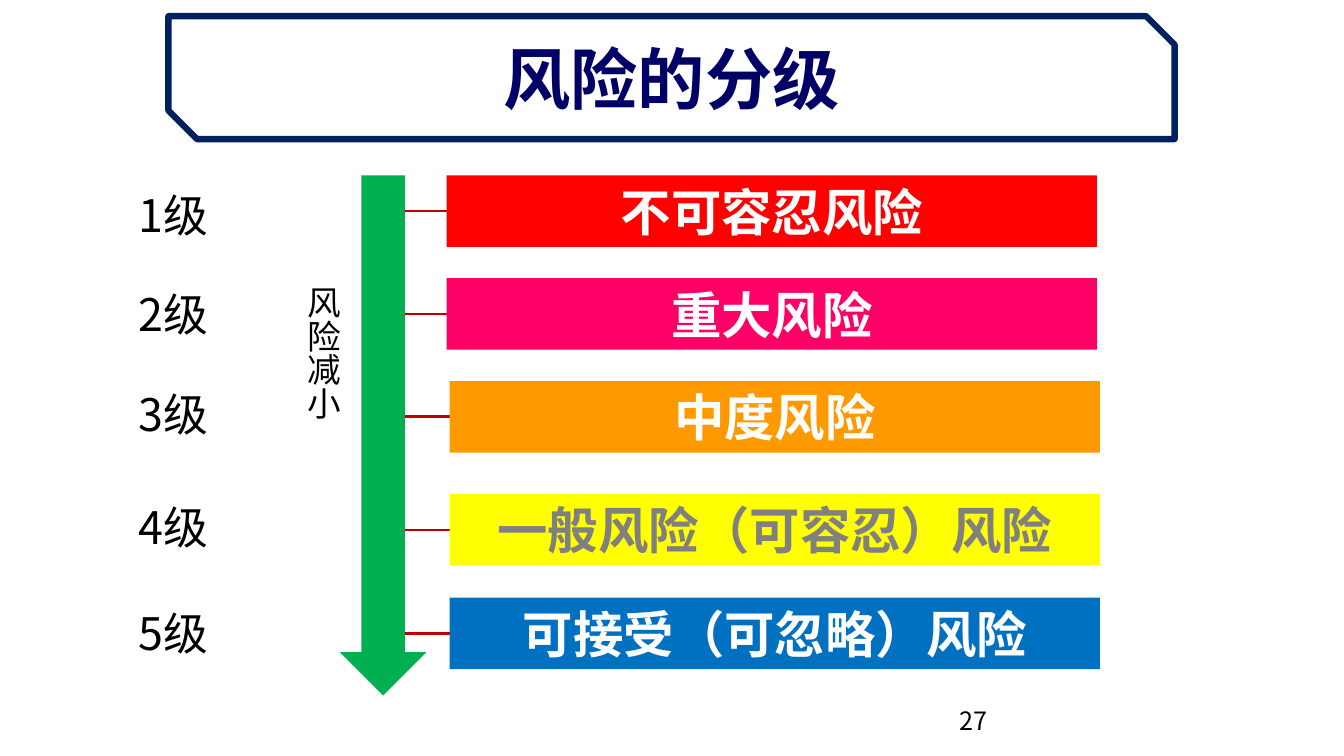
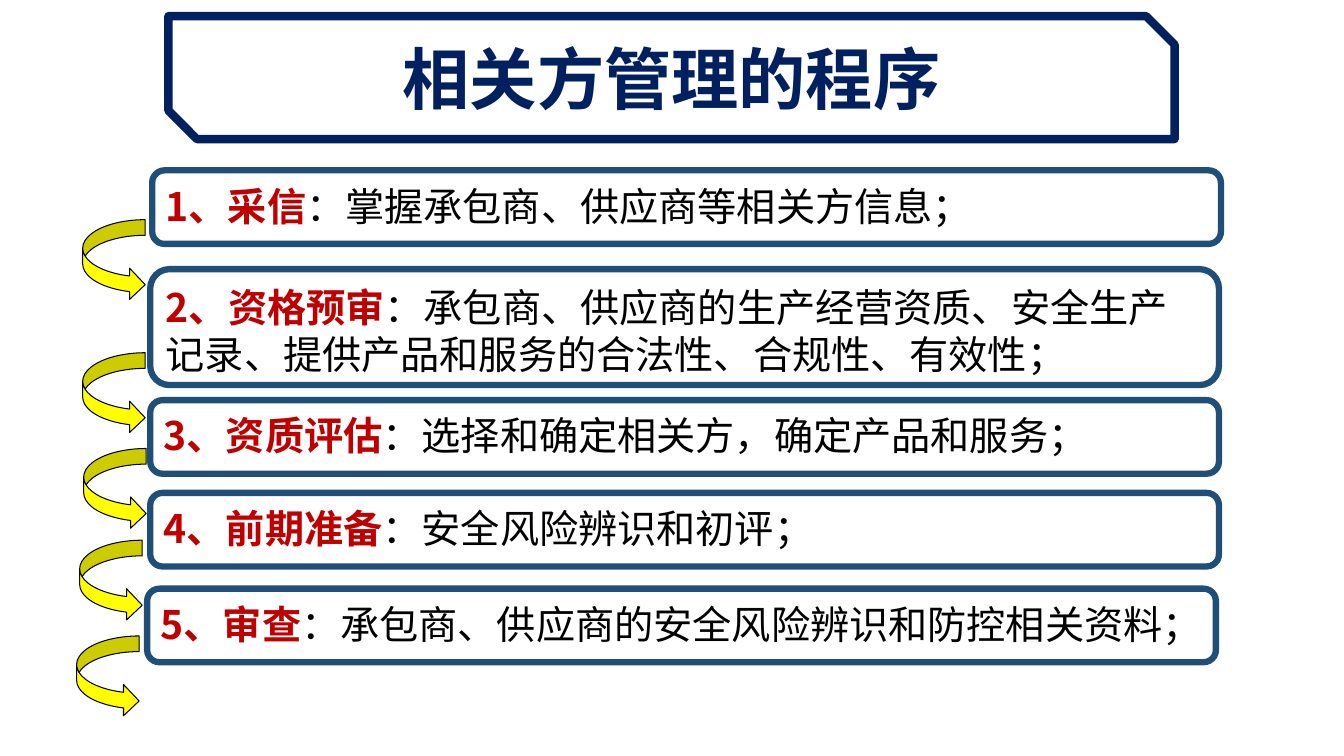
from collections import namedtuple
from lxml import etree
from pptx import Presentation
from pptx.dml.color import RGBColor
from pptx.enum.shapes import MSO_CONNECTOR, MSO_SHAPE
from pptx.enum.text import MSO_ANCHOR, PP_ALIGN
from pptx.oxml.ns import qn
from pptx.util import Inches, Pt

RECTANGLE = MSO_SHAPE.RECTANGLE
ROUNDED = MSO_SHAPE.ROUNDED_RECTANGLE
SNIPPED = MSO_SHAPE.SNIP_2_DIAG_RECTANGLE
DOWN_ARROW = MSO_SHAPE.DOWN_ARROW
CURVED_ARROW = MSO_SHAPE.CURVED_RIGHT_ARROW
STRAIGHT = MSO_CONNECTOR.STRAIGHT
TOP, MIDDLE = MSO_ANCHOR.TOP, MSO_ANCHOR.MIDDLE
LEFT, CENTER = PP_ALIGN.LEFT, PP_ALIGN.CENTER

FONT = "Noto Sans CJK SC"
WHITE, BLACK, GREY = "FFFFFF", "000000", "808080"
NAVY, INDIGO, STEEL = "002060", "000066", "1F4E79"
DARK_RED, GREEN, YELLOW = "C00000", "00B050", "FFFF00"

Box = namedtuple("Box", "left top width height")
Span = namedtuple("Span", "text size color bold")
Level = namedtuple("Level", "name fill color left top label_top line_width")
Step = namedtuple("Step", "name detail left top height arrow_left arrow_top")

SLIDE = Box(0, 0, 13.33, 7.5)
TITLE = Box(1.67, 0.16, 9.98, 1.22)
LEVELS_AREA = Box(1.28, 1.74, 9.63, 5.16)
STEPS_AREA = Box(0.76, 1.69, 11.35, 5.42)
PAGE_NUMBER = Box(9.42, 6.95, 3, 0.4)

LEVELS = [
    Level("不可容忍风险", "FF0000", WHITE, 3.15, 0, 0.07, 1.5),
    Level("重大风险", "FF0066", WHITE, 3.15, 1.02, 1.05, 1.5),
    Level("中度风险", "FF9900", WHITE, 3.18, 2.04, 2.04, 2.25),
    Level("一般风险（可容忍）风险", YELLOW, GREY, 3.18, 3.16, 3.16, 1.5),
    Level("可接受（可忽略）风险", "0070C0", WHITE, 3.18, 4.19, 4.22, 1.5),
]

STEPS = [
    Step("采信", "掌握承包商、供应商等相关方信息；", 0.75, 0, 0.73, 0.06, 0.49),
    Step("资格预审", "承包商、供应商的生产经营资质、安全生产记录、"
         "提供产品和服务的合法性、合规性、有效性；", 0.73, 0.98, 1.15, 0.06, 1.81),
    Step("资质评估", "选择和确定相关方，确定产品和服务；",
         0.73, 2.28, 0.73, 0.07, 2.76),
    Step("前期准备", "安全风险辨识和初评；", 0.73, 3.2, 0.73, 0.03, 3.67),
    Step("审查", "承包商、供应商的安全风险辨识和防控相关资料；",
         0.7, 4.15, 0.73, 0, 4.62),
]


def paint(target, color):
    target.solid()
    target.fore_color.rgb = RGBColor.from_string(color)


def inside(area, left, top, width, height):
    return Box(area.left + left, area.top + top, width, height)


def inches(box):
    return [Inches(length) for length in box]


def write(shape, spans, align=LEFT, anchor=MIDDLE, inset=0.05, spacing=None):
    frame = shape.text_frame
    frame.word_wrap = True
    frame.vertical_anchor = anchor
    frame.margin_top = frame.margin_bottom = Inches(inset)
    para = frame.paragraphs[0]
    para.alignment = align
    if spacing:
        para.line_spacing = Pt(spacing)
    for span in spans:
        run = para.add_run()
        run.text = span.text
        run.font.name = FONT
        run.font.size = Pt(span.size)
        run.font.bold = span.bold
        paint(run.font.fill, span.color)
        east_asian = etree.SubElement(run.font._element, qn("a:ea"))
        east_asian.set("typeface", FONT)


def add_shape(page, kind, box, fill, line=None, line_width=0):
    shape = page.shapes.add_shape(kind, *inches(box))
    shape.shadow.inherit = False
    paint(shape.fill, fill)
    if line:
        paint(shape.line.fill, line)
        shape.line.width = Pt(line_width)
    else:
        shape.line.fill.background()
    return shape


def add_text(page, box, span, align=LEFT, vertical=False):
    shape = page.shapes.add_textbox(*inches(box))
    write(shape, [span], align)
    if vertical:
        shape.text_frame._txBody.bodyPr.set("vert", "eaVert")


def add_line(page, left, right, height, color, width):
    line = page.shapes.add_connector(
        STRAIGHT, *inches((left, height, right, height)))
    paint(line.line.fill, color)
    line.line.width = Pt(width)
    etree.SubElement(line._element.spPr, qn("a:effectLst"))


def add_title(page, box, text, color, line_width):
    banner = add_shape(page, SNIPPED, box, WHITE, NAVY, line_width)
    banner.adjustments[0] = 0
    banner.adjustments[1] = 0.232
    write(banner, [Span(text, 48, color, True)], CENTER)


def add_levels(page, area):
    bar_width, bar_height = 6.45, 0.71
    for level in LEVELS:
        bar_left = area.left + level.left
        add_line(page, area.left + 2.42, bar_left,
                 area.top + level.top + bar_height / 2,
                 DARK_RED, level.line_width)
    add_shape(page, DOWN_ARROW, inside(area, 2.09, 0, 0.86, area.height), GREEN)
    for number, level in enumerate(LEVELS, 1):
        bar = add_shape(page, RECTANGLE, inside(
            area, level.left, level.top, bar_width, bar_height), level.fill)
        write(bar, [Span(level.name, 36, level.color, True)], CENTER, inset=0)
        add_text(page, inside(area, 0, level.label_top, 1.44, 0.64),
                 Span(f"{number}级", 32, BLACK, False))
    add_text(page, inside(area, 1.63, 1, 0.6, 2.7),
             Span("风险减小", 24, BLACK, False), CENTER, vertical=True)


def add_steps(page, area):
    for number, step in enumerate(STEPS, 1):
        panel = add_shape(page, ROUNDED, inside(
            area, step.left, step.top, 10.6, step.height), WHITE, STEEL, 4.5)
        write(panel, [Span(f"{number}、{step.name}", 28, DARK_RED, True),
                      Span(f"：{step.detail}", 28, BLACK, False)],
              anchor=TOP, inset=0.08, spacing=33.6)
    for step in STEPS:
        add_shape(page, CURVED_ARROW, inside(
            area, step.arrow_left, step.arrow_top, 0.62, 0.8),
            YELLOW, BLACK, 0.75)


def build_levels_slide(page):
    add_levels(page, LEVELS_AREA)
    add_text(page, PAGE_NUMBER, Span("27", 18, BLACK, False))
    add_title(page, TITLE, "风险的分级", INDIGO, 4.5)


def build_steps_slide(page):
    add_title(page, TITLE, "相关方管理的程序", NAVY, 6)
    add_steps(page, STEPS_AREA)


def main():
    deck = Presentation()
    deck.slide_width = Inches(SLIDE.width)
    deck.slide_height = Inches(SLIDE.height)
    blank = deck.slide_layouts[6]
    for build in (build_levels_slide, build_steps_slide):
        build(deck.slides.add_slide(blank))
    deck.save("out.pptx")


if __name__ == "__main__":
    main()
